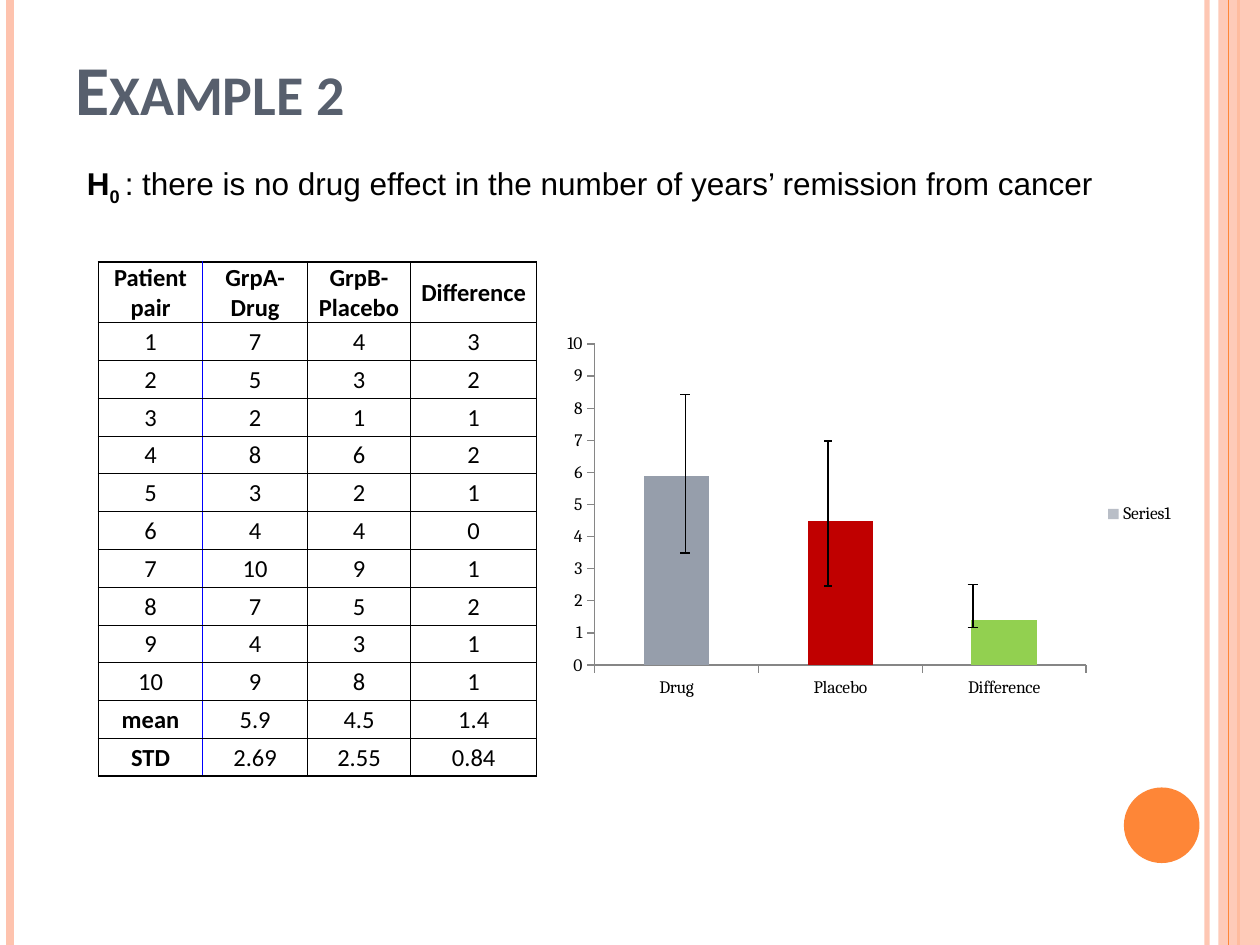
"""Build the slide on drug and placebo remission, with its table and bar chart."""
from dataclasses import dataclass
from typing import Any, NamedTuple

from pptx import Presentation
from pptx.chart.data import CategoryChartData
from pptx.dml.color import RGBColor
from pptx.enum.chart import XL_CHART_TYPE, XL_LEGEND_POSITION, XL_TICK_MARK
from pptx.enum.shapes import MSO_CONNECTOR, MSO_SHAPE
from pptx.enum.text import MSO_ANCHOR, PP_ALIGN
from pptx.oxml import parse_xml
from pptx.oxml.ns import nsdecls, qn
from pptx.oxml.xmlchemy import OxmlElement
from pptx.util import Inches, Pt

COLUMN = XL_CHART_TYPE.COLUMN_CLUSTERED
RIGHT = XL_LEGEND_POSITION.RIGHT
OUT = XL_TICK_MARK.OUTSIDE
NONE = XL_TICK_MARK.NONE
STRAIGHT = MSO_CONNECTOR.STRAIGHT
RECT, OVAL = MSO_SHAPE.RECTANGLE, MSO_SHAPE.OVAL
MIDDLE, BOTTOM = MSO_ANCHOR.MIDDLE, MSO_ANCHOR.BOTTOM
CENTER = PP_ALIGN.CENTER


@dataclass(frozen=True)
class Theme:
    ink: str = "000000"
    slate: str = "575F6D"
    peach: str = "FEC3AE"
    orange: str = "FE8637"
    blue: str = "0000FF"
    axis: str = "868686"
    series: str = "B9BEC7"
    bars: tuple[str, ...] = ("969EAB", "C00000", "92D050")
    head: str = "Calibri"
    body: str = "Arial"
    plot: str = "Cambria"
    title: float = 40
    lead: float = 18
    cell: float = 14
    label: float = 10


class Line(NamedTuple):
    x1: float
    y1: float
    x2: float
    y2: float
    color: str
    width: float
    alpha: int = 100


class Block(NamedTuple):
    kind: Any
    box: tuple[float, float, float, float]
    color: str
    alpha: int = 100


class Whisker(NamedTuple):
    x: float
    top: float
    low: float
    cap: float


THEME = Theme()
DECOR = (
    Line(9.58, 0, 9.58, 7.5, THEME.peach, 3, 93),
    Line(0.08, 0, 0.08, 7.5, THEME.peach, 4.5),
    Line(9.83, 0, 9.83, 7.5, THEME.orange, 1.5),
    Block(RECT, (9.67, 0, 0.33, 7.5), THEME.peach, 87),
    Line(9.75, 0, 9.75, 7.5, THEME.orange, 0.75),
    Block(OVAL, (8.92, 6.25, 0.6, 0.6), THEME.orange),
)
WHISKERS = (
    Whisker(5.44, 3.13, 4.39, 0.04),
    Whisker(6.57, 3.5, 4.65, 0.03),
    Whisker(7.72, 4.64, 4.98, 0.04),
)
HEADS = ("Patient pair", "GrpA-Drug", "GrpB-Placebo", "Difference")
PAIRS = ((7, 4), (5, 3), (2, 1), (8, 6), (3, 2),
         (4, 4), (10, 9), (7, 5), (4, 3), (9, 8))
MEANS = (5.9, 4.5, 1.4)
ROWS = (
    HEADS,
    *((i, a, b, a - b) for i, (a, b) in enumerate(PAIRS, 1)),
    ("mean", *MEANS),
    ("STD", 2.69, 2.55, 0.84),
)


def rgb(color: str) -> RGBColor:
    return RGBColor.from_string(color)


def fade(fill: Any, alpha: int) -> None:
    if alpha < 100:
        node = OxmlElement("a:alpha")
        node.set("val", str(alpha * 1000))
        fill.find(".//" + qn("a:srgbClr")).append(node)


def put(para: Any, text: str, *, font: str, size: float, color: str = THEME.ink,
        bold: bool = False, caps: bool = False, base: int = 0) -> None:
    run = para.add_run()
    run.text = text
    face = run.font
    face.name, face.size, face.bold = font, Pt(size), bold
    face.color.rgb = rgb(color)
    props = run._r.get_or_add_rPr()
    if caps:
        props.set("cap", "small")
    if base:
        props.set("baseline", str(base * 1000))


def draw_line(slide: Any, line: Line) -> None:
    ends = (Inches(v) for v in line[:4])
    link = slide.shapes.add_connector(STRAIGHT, *ends)
    link.line.color.rgb = rgb(line.color)
    link.line.width = Pt(line.width)
    props = link._element.spPr
    fade(props, line.alpha)
    props.append(OxmlElement("a:effectLst"))


def draw_block(slide: Any, block: Block) -> None:
    shape = slide.shapes.add_shape(block.kind, *(Inches(v) for v in block.box))
    shape.shadow.inherit = False
    shape.fill.solid()
    shape.fill.fore_color.rgb = rgb(block.color)
    shape.line.fill.background()
    fade(shape._element.spPr, block.alpha)


def draw_mark(slide: Any, mark: Whisker) -> None:
    left, right = mark.x - mark.cap, mark.x + mark.cap
    draw_line(slide, Line(mark.x, mark.top, mark.x, mark.low, THEME.ink, 1))
    for y in (mark.top, mark.low):
        draw_line(slide, Line(left, y, right, y, THEME.ink, 1))


def add_text(slide: Any, box: tuple[float, ...], wrap: bool) -> Any:
    frame = slide.shapes.add_textbox(*(Inches(v) for v in box)).text_frame
    frame.word_wrap = wrap
    return frame


def edge(side: str, color: str, width: float) -> Any:
    return parse_xml(
        f'<a:ln{side} {nsdecls("a")} w="{int(Pt(width))}"><a:solidFill>'
        f'<a:srgbClr val="{color}"/></a:solidFill></a:ln{side}>')


def draw_cell(cell: Any, row: int, col: int, text: str) -> None:
    cell.fill.background()
    cell.vertical_anchor = MIDDLE
    cell.margin_left = cell.margin_right = cell.margin_top = Inches(0.01)
    cell.margin_bottom = 0
    para = cell.text_frame.paragraphs[0]
    para.alignment = CENTER
    bold = row == 0 or not (col or text.isdigit())
    put(para, text, font=THEME.head, size=THEME.cell, bold=bold)
    outer = {"L": col == 0, "R": col == len(HEADS) - 1,
             "T": row == 0, "B": row == len(ROWS) - 1}
    props = cell._tc.get_or_add_tcPr()
    for spot, (side, rim) in enumerate(outer.items()):
        seam = (col, side) in ((0, "R"), (1, "L"))
        color = THEME.blue if seam else THEME.ink
        props.insert(spot, edge(side, color, 1 if rim else 0.5))


def draw_table(slide: Any) -> None:
    box = (Inches(v) for v in (0.78, 2.08, 3.47, 4.11))
    table = slide.shapes.add_table(len(ROWS), len(HEADS), *box).table
    table.first_row = table.horz_banding = False
    for col, width in zip(table.columns, (0.83, 0.83, 0.82, 1)):
        col.width = Inches(width)
    for r, row in enumerate(ROWS):
        table.rows[r].height = Inches(0.3 if r else 0.48)
        for c, value in enumerate(row):
            draw_cell(table.cell(r, c), r, c, str(value))


def draw_chart(slide: Any) -> None:
    data = CategoryChartData()
    data.categories = ("Drug", "Placebo", "Difference")
    data.add_series("Series1", MEANS)
    box = (Inches(v) for v in (4.42, 2.58, 5, 3))
    chart = slide.shapes.add_chart(COLUMN, *box, data).chart
    chart.has_title = False
    chart.font.name, chart.font.size = THEME.plot, Pt(THEME.label)
    chart.font.color.rgb = rgb(THEME.ink)
    chart.has_legend = True
    chart.legend.position = RIGHT
    chart.legend.include_in_layout = False
    plot = chart.plots[0]
    plot.vary_by_categories = False
    plot.gap_width = 150
    series = plot.series[0]
    fills = [series.format.fill]
    fills += [series.points[i].format.fill for i in range(len(MEANS))]
    for fill, color in zip(fills, (THEME.series, *THEME.bars)):
        fill.solid()
        fill.fore_color.rgb = rgb(color)
    for axis in (chart.category_axis, chart.value_axis):
        axis.major_tick_mark, axis.minor_tick_mark = OUT, NONE
        axis.has_major_gridlines = False
        axis.format.line.color.rgb = rgb(THEME.axis)
    scale = chart.value_axis
    scale.minimum_scale, scale.maximum_scale, scale.major_unit = 0, 10, 1
    area = chart._chartSpace.find(".//" + qn("c:plotArea"))
    for old in area.findall(qn("c:layout")):
        area.remove(old)
    parts = '<c:layoutTarget val="inner"/><c:xMode val="edge"/><c:yMode val="edge"/>'
    for name, value in {"x": 0.06, "y": 0.05, "w": 0.78, "h": 0.85}.items():
        parts += f'<c:{name} val="{value}"/>'
    area.insert(0, parse_xml(
        f'<c:layout {nsdecls("c")}><c:manualLayout>{parts}</c:manualLayout></c:layout>'))


def main() -> None:
    deck = Presentation()
    deck.slide_width, deck.slide_height = Inches(10), Inches(7.5)
    slide = deck.slides.add_slide(deck.slide_layouts[6])
    for item in DECOR:
        if isinstance(item, Line):
            draw_line(slide, item)
        else:
            draw_block(slide, item)
    title = add_text(slide, (0.5, -0.17, 8.17, 1.25), True)
    title.vertical_anchor = BOTTOM
    put(title.paragraphs[0], "Example 2", font=THEME.head, size=THEME.title,
        color=THEME.slate, bold=True, caps=True)
    draw_table(slide)
    lead = add_text(slide, (0.59, 1.25, 8.21, 0.4), False).paragraphs[0]
    look = {"font": THEME.body, "size": THEME.lead}
    put(lead, "H", bold=True, **look)
    put(lead, "0 ", bold=True, base=-25, **look)
    put(lead, ": there is no drug effect in the number of years’ remission from cancer",
        **look)
    draw_chart(slide)
    for mark in WHISKERS:
        draw_mark(slide, mark)
    deck.save("out.pptx")


if __name__ == "__main__":
    main()
